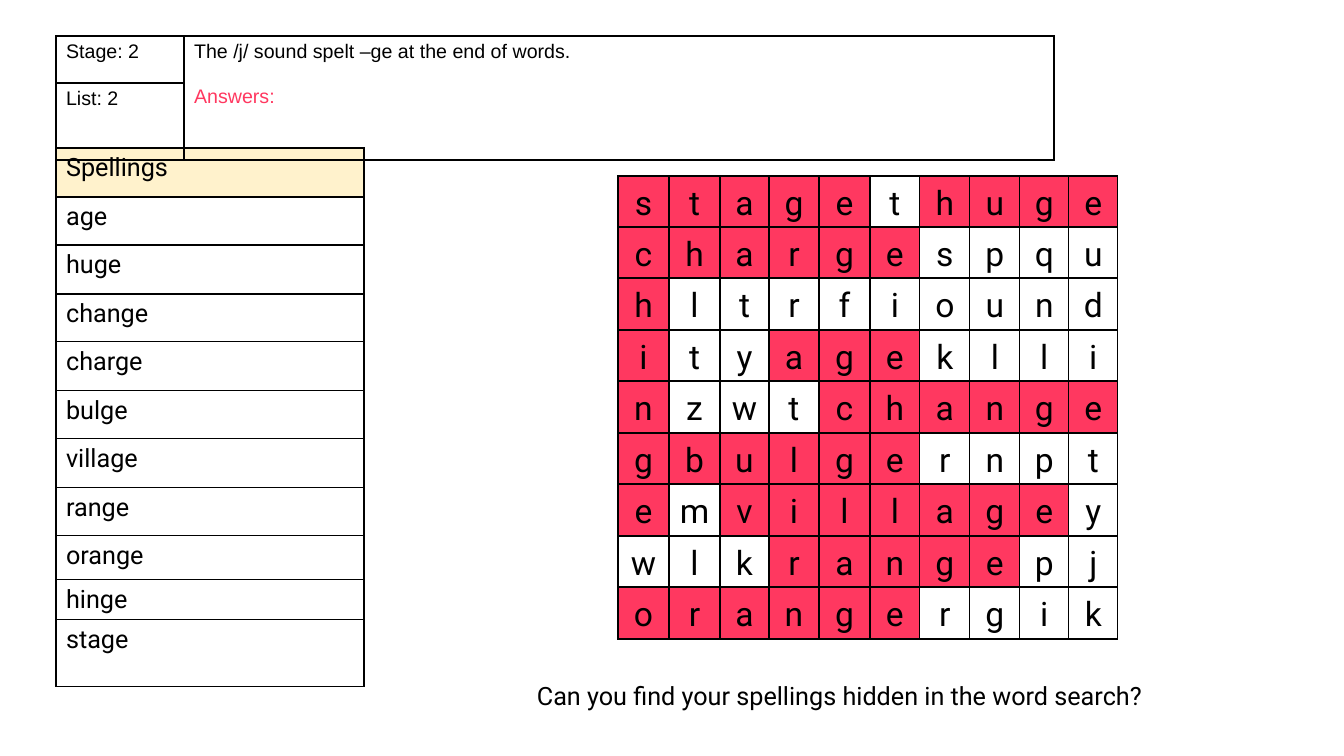
"""Build the word search answer slide for words ending in -ge."""
from dataclasses import dataclass

import lxml.etree
import pptx
import pptx.dml.color
import pptx.enum.text
import pptx.oxml.ns
import pptx.util

EMU_PER_PX = 914400 / 100.8
COLOURS = {"black": "000000", "answer": "FF3860", "heading": "FFF2CC"}

SPELLINGS = ["Spellings", "age", "huge", "change", "charge", "bulge", "village",
             "range", "orange", "hinge", "stage"]
# Capitals mark the letters that belong to an answer.
LETTERS = ["STAGEtHUGE", "CHARGEspqu", "Hltrfiound", "ItyAGEklli", "NzwtCHANGE",
           "GBULGErnpt", "EmVILLAGEy", "wlkRANGEpj", "ORANGErgik"]
GRID_HEIGHT = 463


@dataclass(frozen=True)
class Style:
    font: str
    size: int
    align: pptx.enum.text.PP_ALIGN = pptx.enum.text.PP_ALIGN.LEFT
    line_spacing: float = 1.0
    space_after: int = 0


@dataclass(frozen=True)
class Grid:
    left: int
    top: int
    columns: list[int]
    rows: list[int]


BODY = Style("Roboto", 18)
HEADER = Style("Arial", 14)
LETTER = Style("Roboto", 24, pptx.enum.text.PP_ALIGN.CENTER, 1.2, 10)

SPELLING_GRID = Grid(56, 148, [308], [49, 48] * 4 + [44, 40, 67])
HEADER_GRID = Grid(56, 36, [128, 870], [47, 77])
LETTER_GRID = Grid(
    618, 176, [51, 51, 49, 50, 51, 50, 50, 50, 49, 49],
    [GRID_HEIGHT * (i + 1) // 9 - GRID_HEIGHT * i // 9 for i in range(9)])


def px(length: int) -> pptx.util.Emu:
    """Turn pixels into EMU."""
    return pptx.util.Emu(round(length * EMU_PER_PX))


def rgb(name: str) -> pptx.dml.color.RGBColor:
    """Look up a named colour."""
    return pptx.dml.color.RGBColor.from_string(COLOURS[name])


def write(para, text: str, style: Style, colour: str = "black") -> None:
    """Put styled text in a paragraph."""
    para.text = text
    para.alignment = style.align
    para.line_spacing = style.line_spacing
    para.space_after = pptx.util.Pt(style.space_after)
    para.font.name = style.font
    para.font.size = pptx.util.Pt(style.size)
    para.font.color.rgb = rgb(colour)


def add_borders(cell) -> None:
    """Draw thin black lines on all four sides of a cell."""
    qn = pptx.oxml.ns.qn
    properties = cell._tc.get_or_add_tcPr()
    for side in ("a:lnL", "a:lnR", "a:lnT", "a:lnB"):
        line = lxml.etree.SubElement(properties, qn(side), w=str(pptx.util.Pt(1)))
        fill = lxml.etree.SubElement(line, qn("a:solidFill"))
        lxml.etree.SubElement(fill, qn("a:srgbClr"), val=COLOURS["black"])


def fill_cell(cell, colour: str) -> None:
    """Fill a cell with a named colour."""
    cell.fill.solid()
    cell.fill.fore_color.rgb = rgb(colour)


def add_grid(page, grid: Grid):
    """Add a plain bordered table."""
    table = page.shapes.add_table(
        len(grid.rows), len(grid.columns), px(grid.left), px(grid.top),
        px(sum(grid.columns)), px(sum(grid.rows))).table
    table.first_row = table.horz_banding = False
    for column, width in zip(table.columns, grid.columns):
        column.width = px(width)
    for row, height in zip(table.rows, grid.rows):
        row.height = px(height)
    for cell in table.iter_cells():
        add_borders(cell)
        cell.fill.background()
    return table


def add_spellings(page) -> None:
    """Add the spelling list."""
    table = add_grid(page, SPELLING_GRID)
    for cell, word in zip(table.iter_cells(), SPELLINGS):
        write(cell.text_frame.paragraphs[0], word, BODY)
    fill_cell(table.cell(0, 0), "heading")


def add_header(page) -> None:
    """Add the stage, list and rule."""
    table = add_grid(page, HEADER_GRID)
    table.cell(0, 1).merge(table.cell(1, 1))
    for row, label in enumerate(("Stage: 2", "List: 2")):
        write(table.cell(row, 0).text_frame.paragraphs[0], label, HEADER)
    frame = table.cell(0, 1).text_frame
    write(frame.paragraphs[0], "The /j/ sound spelt –ge at the end of words.", HEADER)
    answers = frame.add_paragraph()
    answers.space_before = pptx.util.Pt(16)
    write(answers, "Answers:", HEADER, "answer")


def add_word_search(page) -> None:
    """Add the letters with the answers filled in."""
    table = add_grid(page, LETTER_GRID)
    for cell, letter in zip(table.iter_cells(), "".join(LETTERS)):
        cell.margin_left = cell.margin_right = px(7)
        cell.margin_top = cell.margin_bottom = 0
        write(cell.text_frame.paragraphs[0], letter.lower(), LETTER)
        if letter.isupper():
            fill_cell(cell, "answer")


def add_question(page) -> None:
    """Add the question under the word search."""
    box = page.shapes.add_textbox(px(527), px(675), px(873), px(40))
    box.text_frame.word_wrap = True
    write(box.text_frame.paragraphs[0],
          "Can you find your spellings hidden in the word search?", BODY)


def main() -> None:
    """Build and save the deck."""
    deck = pptx.Presentation()
    deck.slide_width, deck.slide_height = px(1344), px(756)
    page = deck.slides.add_slide(deck.slide_layouts[6])
    add_spellings(page)
    add_header(page)
    add_word_search(page)
    add_question(page)
    deck.save("out.pptx")


if __name__ == "__main__":
    main()
